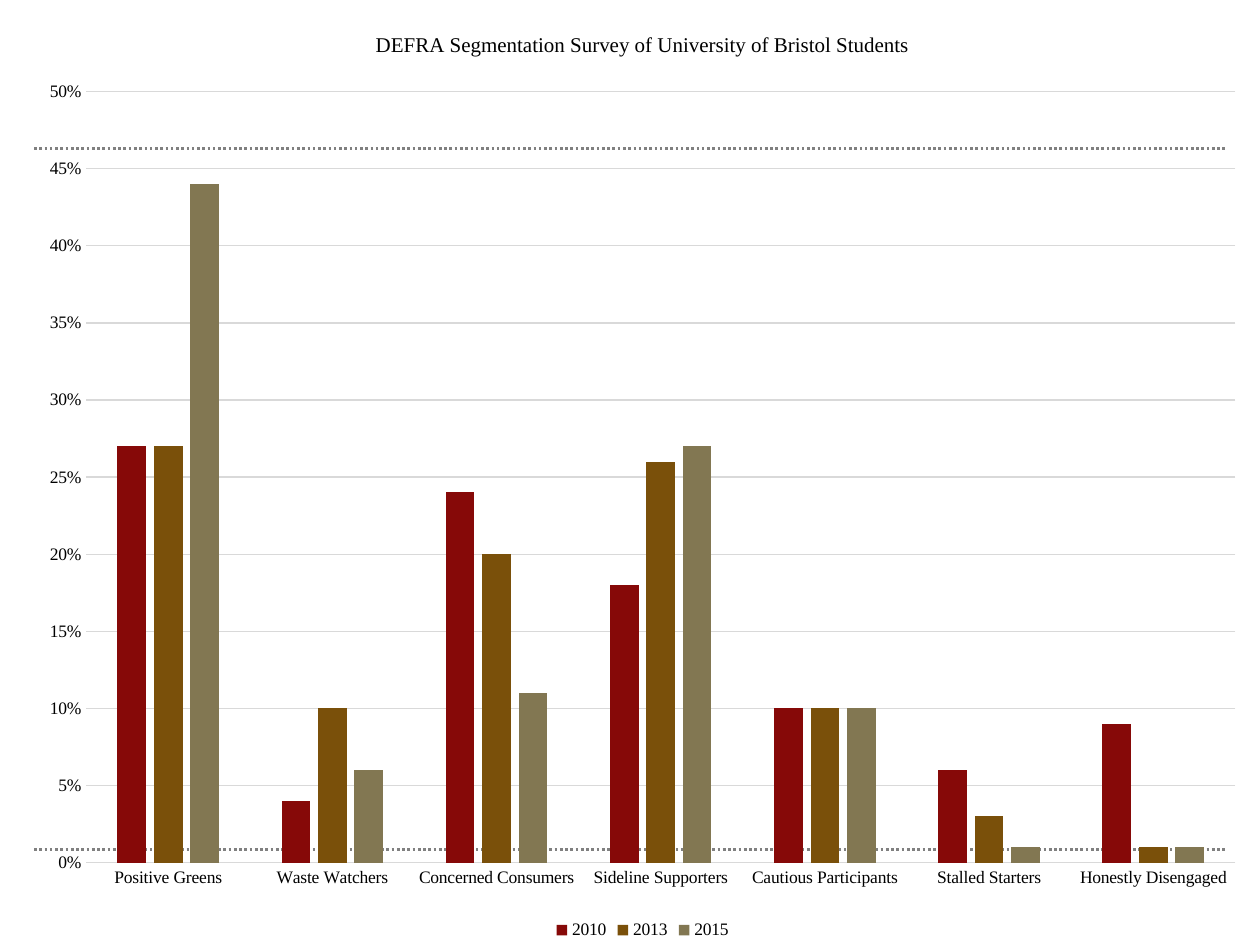
"""Build a survey slide with a clustered column chart between two dotted rules."""
from dataclasses import dataclass

from pptx import Presentation
from pptx import oxml
from pptx import util as u
from pptx.chart import data as chart_data
from pptx.dml import color
from pptx.enum import chart as kinds
from pptx.enum import dml, shapes
from pptx.oxml import ns

FONT = "Times New Roman"
COLOURS = {
    "text": "000000",
    "rule": "808080",
    "grid": "D9D9D9",
    "2010": "860908",
    "2013": "7A500A",
    "2015": "827752",
}
TITLE = "DEFRA Segmentation Survey of University of Bristol Students"
SEGMENTS = (
    "Positive Greens",
    "Waste Watchers",
    "Concerned Consumers",
    "Sideline Supporters",
    "Cautious Participants",
    "Stalled Starters",
    "Honestly Disengaged",
)


@dataclass(frozen=True)
class Survey:
    year: str
    shares: tuple[float, ...]


@dataclass(frozen=True)
class Rule:
    left: float
    right: float
    top: float


SURVEYS = (
    Survey("2010", (0.27, 0.04, 0.24, 0.18, 0.10, 0.06, 0.09)),
    Survey("2013", (0.27, 0.10, 0.20, 0.26, 0.10, 0.03, 0.01)),
    Survey("2015", (0.44, 0.06, 0.11, 0.27, 0.10, 0.01, 0.01)),
)
RULES = (Rule(19.5, 700.5, 85), Rule(19.5, 700.5, 485.3))


def rgb(name: str) -> color.RGBColor:
    return color.RGBColor.from_string(COLOURS[name])


def style_font(font, size: float) -> None:
    font.name = FONT
    font.size = u.Pt(size)
    font.bold = False
    font.color.rgb = rgb("text")


def style_line(line, name: str, width: float) -> None:
    line.color.rgb = rgb(name)
    line.width = u.Pt(width)


def draw_rule(page, rule: Rule) -> None:
    connector = page.shapes.add_connector(
        shapes.MSO_CONNECTOR.STRAIGHT,
        u.Pt(rule.left), u.Pt(rule.top), u.Pt(rule.right), u.Pt(rule.top),
    )
    style_line(connector.line, "rule", 1.5)
    connector.line.dash_style = dml.MSO_LINE.ROUND_DOT
    properties = connector.element.find(ns.qn("p:spPr"))
    properties.append(oxml.parse_xml(f"<a:effectLst {ns.nsdecls('a')}/>"))


def clear_background(chart) -> None:
    chart.element.find(ns.qn("c:chart")).addnext(oxml.parse_xml(
        f"<c:spPr {ns.nsdecls('c', 'a')}><a:noFill/>"
        "<a:ln><a:noFill/></a:ln></c:spPr>"
    ))


def style_axes(chart) -> None:
    segments, shares = chart.category_axis, chart.value_axis
    for axis in (segments, shares):
        axis.major_tick_mark = kinds.XL_TICK_MARK.NONE
        axis.minor_tick_mark = kinds.XL_TICK_MARK.NONE
        style_font(axis.tick_labels.font, 10)
    style_line(segments.format.line, "grid", 0.75)
    shares.format.line.fill.background()
    shares.has_major_gridlines = True
    style_line(shares.major_gridlines.format.line, "grid", 0.75)
    shares.minimum_scale = 0
    shares.maximum_scale = 0.5
    shares.major_unit = 0.05
    shares.tick_labels.number_format = "0%"
    shares.tick_labels.number_format_is_linked = False


def draw_chart(page, surveys: tuple[Survey, ...]) -> None:
    table = chart_data.CategoryChartData(number_format="0%")
    table.categories = SEGMENTS
    for survey in surveys:
        table.add_series(survey.year, survey.shares)
    chart = page.shapes.add_chart(
        kinds.XL_CHART_TYPE.COLUMN_CLUSTERED,
        u.Pt(14.4), u.Pt(1.4), u.Pt(705.6), u.Pt(538.6), table,
    ).chart
    style_font(chart.font, 10)
    clear_background(chart)

    chart.has_title = True
    chart.chart_title.include_in_layout = False
    frame = chart.chart_title.text_frame
    frame.text = TITLE
    style_font(frame.paragraphs[0].runs[0].font, 12)

    chart.has_legend = True
    chart.legend.position = kinds.XL_LEGEND_POSITION.BOTTOM
    chart.legend.include_in_layout = False
    style_font(chart.legend.font, 10)

    style_axes(chart)
    plot = chart.plots[0]
    plot.gap_width = 219
    plot.overlap = -27
    plot.vary_by_categories = False
    for series in plot.series:
        series.format.fill.solid()
        series.format.fill.fore_color.rgb = rgb(series.name)
        series.invert_if_negative = False


def main() -> None:
    deck = Presentation()
    deck.slide_width, deck.slide_height = u.Pt(720), u.Pt(540)
    page = deck.slides.add_slide(deck.slide_layouts.get_by_name("Blank"))
    for rule in RULES:
        draw_rule(page, rule)
    draw_chart(page, SURVEYS)
    deck.save("out.pptx")


if __name__ == "__main__":
    main()
